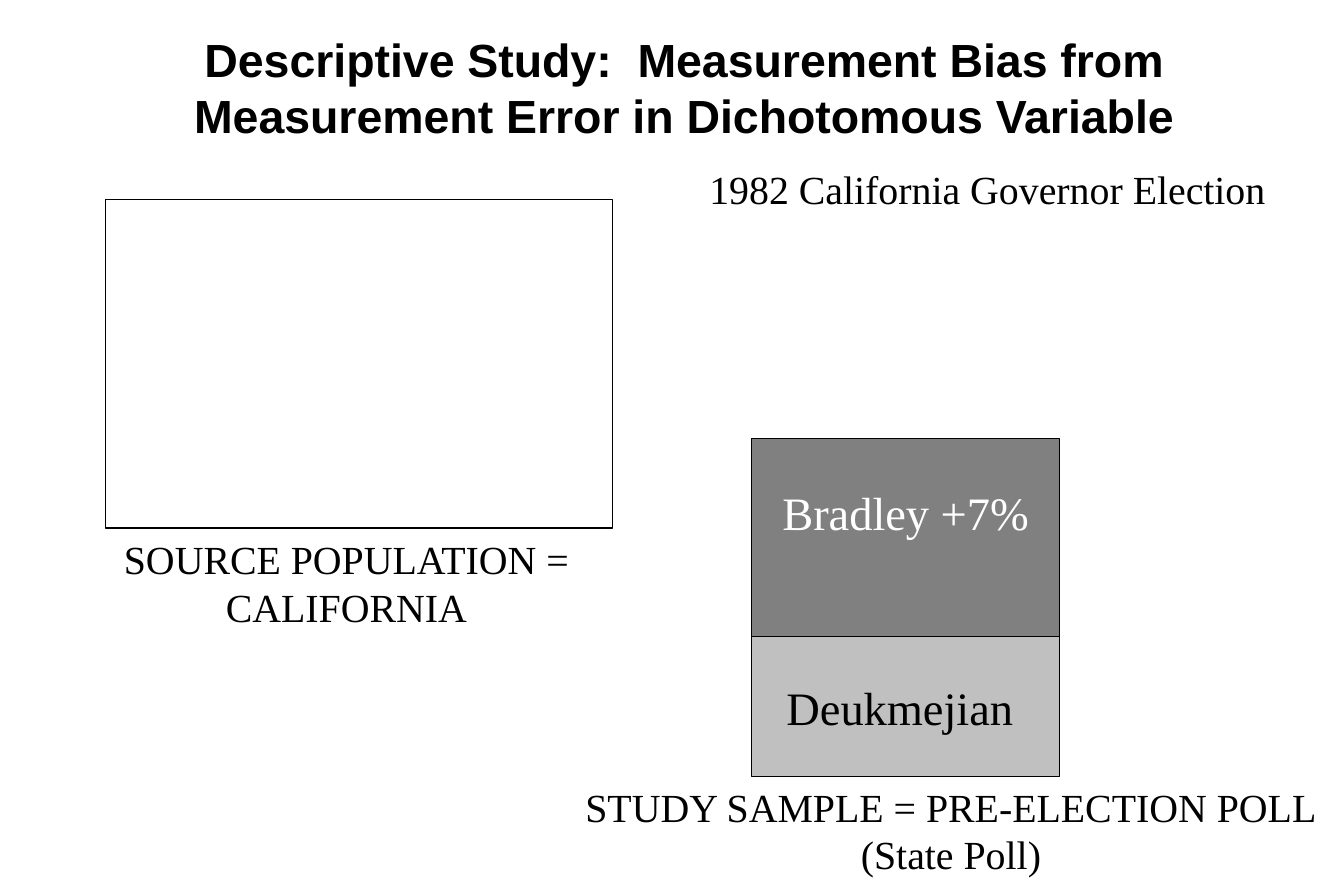
from dataclasses import dataclass

from pptx import Presentation
from pptx.dml.color import RGBColor
from pptx.enum.shapes import MSO_SHAPE
from pptx.enum.text import MSO_ANCHOR, PP_ALIGN
from pptx.util import Pt

RECTANGLE = MSO_SHAPE.RECTANGLE
TOP = MSO_ANCHOR.TOP
CENTER = PP_ALIGN.CENTER
PX = 9144  # 100 px to the inch


@dataclass(frozen=True)
class Theme:
    black: RGBColor = RGBColor(0x00, 0x00, 0x00)
    white: RGBColor = RGBColor(0xFF, 0xFF, 0xFF)
    dark_gray: RGBColor = RGBColor(0x80, 0x80, 0x80)
    light_gray: RGBColor = RGBColor(0xC0, 0xC0, 0xC0)
    heading_font: str = "Arial"
    body_font: str = "Times New Roman"
    large: Pt = Pt(28)
    medium: Pt = Pt(24)
    outline: Pt = Pt(0.75)


class SlideBuilder:
    def __init__(self, slide, theme):
        self.slide = slide
        self.theme = theme

    def set_text(self, shape, lines, margin_top=5, wrap=True, **font_format):
        """Fill a shape with centred lines, starting margin_top px below its top."""
        frame = shape.text_frame
        frame.word_wrap = wrap
        frame.vertical_anchor = TOP
        frame.margin_top = margin_top * PX
        values = {"name": self.theme.body_font, "size": self.theme.medium,
                  "bold": False} | font_format
        color = values.pop("color", self.theme.black)
        for index, line in enumerate(lines):
            paragraph = frame.add_paragraph() if index else frame.paragraphs[0]
            paragraph.alignment = CENTER
            run = paragraph.add_run()
            run.text = line
            run.font.color.rgb = color
            for name, value in values.items():
                setattr(run.font, name, value)

    def text(self, box, *lines, **text_format):
        shape = self.slide.shapes.add_textbox(*(length * PX for length in box))
        self.set_text(shape, lines, **text_format)

    def rectangle(self, box, fill=None):
        shape = self.slide.shapes.add_shape(
            RECTANGLE, *(length * PX for length in box))
        shape.shadow.inherit = False
        if fill is None:
            shape.fill.background()
        else:
            shape.fill.solid()
            shape.fill.fore_color.rgb = fill
        shape.line.color.rgb = self.theme.black
        shape.line.width = self.theme.outline
        return shape

    def candidate(self, box, label, fill, **text_format):
        shape = self.rectangle(box, fill)
        self.set_text(shape, [label], size=self.theme.large, **text_format)


def main():
    theme = Theme()
    presentation = Presentation()
    presentation.slide_width = 1125 * PX
    presentation.slide_height = 750 * PX
    slide = presentation.slides.add_slide(presentation.slide_layouts[6])
    builder = SlideBuilder(slide, theme)

    builder.text((42, 443, 496, 91), "SOURCE POPULATION = CALIFORNIA")
    builder.text((479, 650, 634, 90), "STUDY SAMPLE = PRE-ELECTION POLL",
                 "(State Poll)", wrap=False)
    builder.text((83, 21, 979, 104),
                 "Descriptive Study:  Measurement Bias from "
                 "Measurement Error in Dichotomous Variable",
                 name=theme.heading_font, size=theme.large, bold=True)
    builder.candidate((629, 522, 258, 128), "Deukmejian ", theme.light_gray,
                      margin_top=46)
    builder.candidate((629, 367, 258, 166), "Bradley +7%", theme.dark_gray,
                      margin_top=38, color=theme.white)
    builder.rectangle((88, 167, 425, 275))
    builder.text((562, 133, 529, 50), "1982 California Governor Election")

    presentation.save("out.pptx")


if __name__ == "__main__":
    main()
